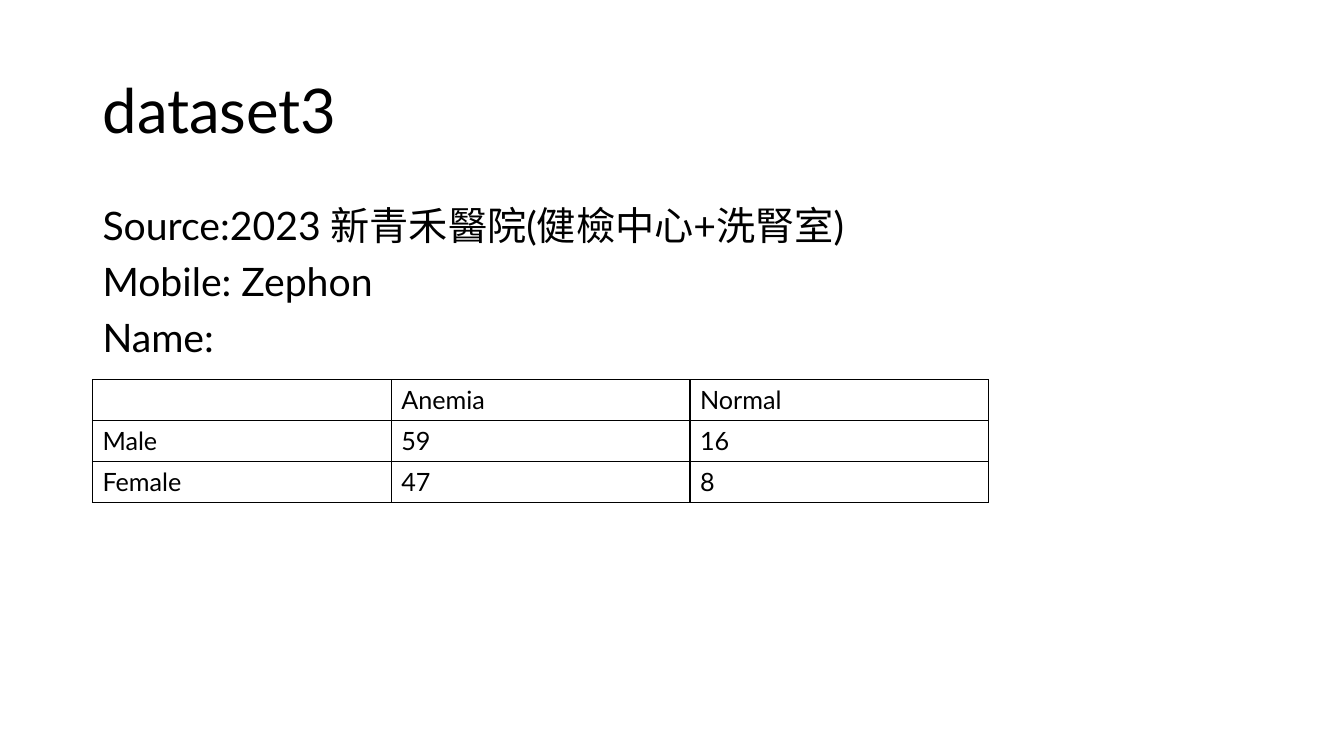
from lxml import etree
from pptx import Presentation
from pptx.dml.color import RGBColor
from pptx.enum import text
from pptx.oxml import ns
from pptx.util import Cm, Pt

FONT = "Lato"
COLOURS = {"ink": "000000", "paper": "FFFFFF"}
MARGIN = Cm(2.33)
CONTENT_WIDTH = Cm(29.21)

SOURCE_LINES = [
    "Source:2023 新青禾醫院(健檢中心+洗腎室)",
    "Mobile: Zephon",
    "Name:",
]
COUNTS = [
    ["", "Anemia", "Normal"],
    ["Male", "59", "16"],
    ["Female", "47", "8"],
]


def colour(name):
    return RGBColor.from_string(COLOURS[name])


def style(paragraph, size):
    paragraph.alignment = text.PP_ALIGN.LEFT
    paragraph.font.name = FONT
    paragraph.font.size = Pt(size)
    paragraph.font.color.rgb = colour("ink")


def fill_placeholder(holder, top, height, lines, size, anchor, space_before):
    holder.left, holder.top = MARGIN, top
    holder.width, holder.height = CONTENT_WIDTH, height
    frame = holder.text_frame
    frame.text = "\n".join(lines)
    frame.word_wrap = True
    frame.auto_size = text.MSO_AUTO_SIZE.NONE
    frame.vertical_anchor = anchor
    for paragraph in frame.paragraphs:
        style(paragraph, size)
        paragraph.line_spacing = 0.9
        paragraph.space_before = Pt(space_before)
        # No bullet and no hanging indent
        properties = paragraph._p.get_or_add_pPr()
        properties.set("marL", "0")
        properties.set("indent", "0")
        etree.SubElement(properties, ns.qn("a:buNone"))


def add_borders(cell):
    properties = cell._tc.get_or_add_tcPr()
    for side in ("lnL", "lnR", "lnT", "lnB"):
        line = etree.SubElement(properties, ns.qn(f"a:{side}"), w=str(Pt(1)))
        fill = etree.SubElement(line, ns.qn("a:solidFill"))
        etree.SubElement(fill, ns.qn("a:srgbClr"), val=COLOURS["ink"])


def add_count_table(slide, rows, top, column_width, row_height):
    columns = len(rows[0])
    table = slide.shapes.add_table(
        len(rows), columns, MARGIN, top,
        column_width * columns, row_height * len(rows)).table
    table.first_row = table.horz_banding = False
    for r, row in enumerate(rows):
        for c, value in enumerate(row):
            cell = table.cell(r, c)
            cell.text = value
            style(cell.text_frame.paragraphs[0], 18)
            add_borders(cell)
            cell.fill.solid()
            cell.fill.fore_color.rgb = colour("paper")


def main():
    deck = Presentation()
    deck.slide_width, deck.slide_height = Cm(33.87), Cm(19.05)
    slide = deck.slides.add_slide(deck.slide_layouts[1])

    # Title and description
    fill_placeholder(slide.shapes.title, Cm(1.01), Cm(3.68), ["dataset3"],
                     44, text.MSO_ANCHOR.MIDDLE, 0)
    fill_placeholder(slide.placeholders[1], Cm(5.07), Cm(12.09), SOURCE_LINES,
                     28, text.MSO_ANCHOR.TOP, 10)

    # Counts by sex and diagnosis
    add_count_table(slide, COUNTS, Cm(9.57), Cm(7.53), Cm(1.03))

    deck.save("out.pptx")


if __name__ == "__main__":
    main()
